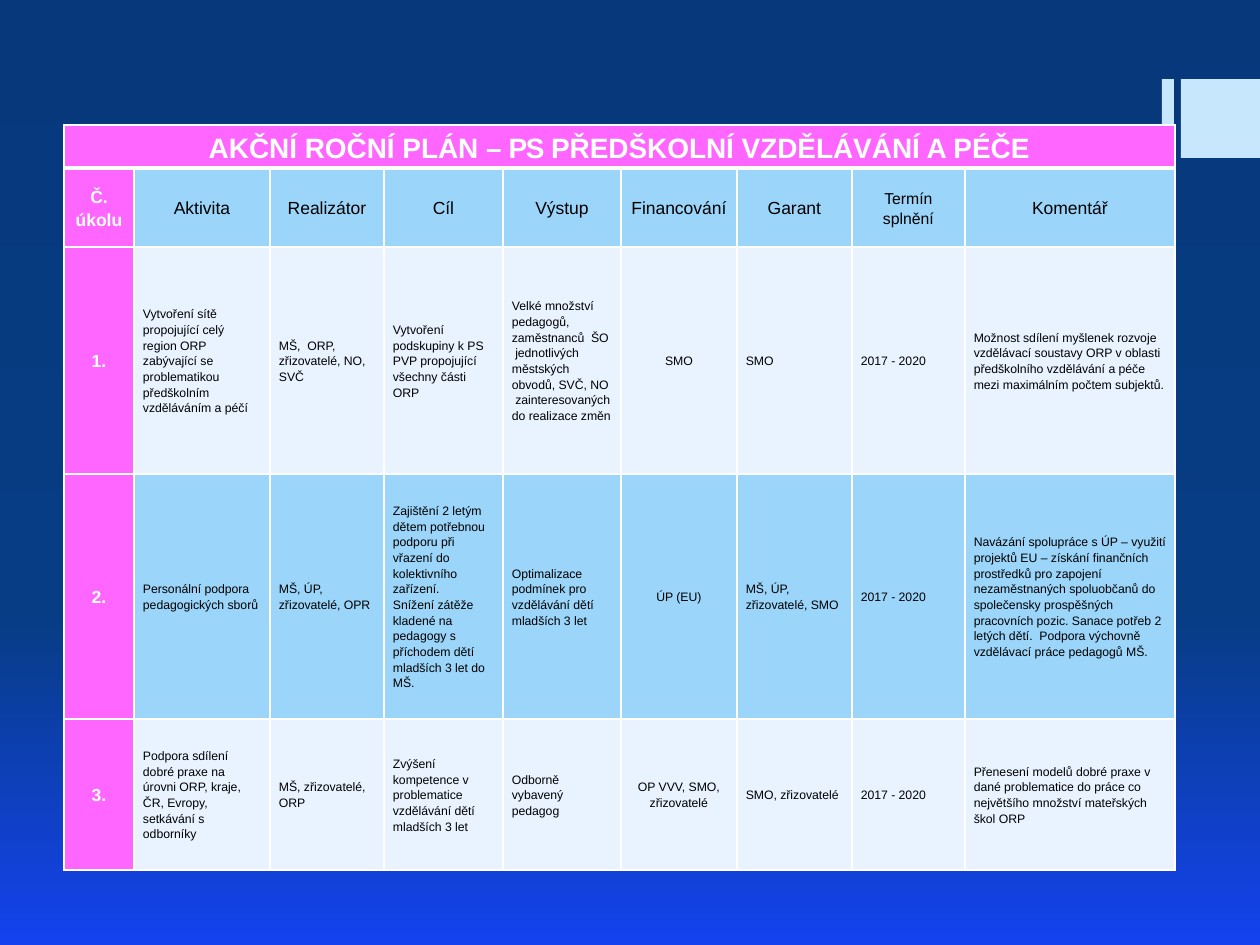
from copy import deepcopy

from pptx import Presentation
from pptx.dml.color import RGBColor
from pptx.enum.shapes import MSO_SHAPE
from pptx.enum.text import MSO_ANCHOR, PP_ALIGN
from pptx.oxml import parse_xml
from pptx.oxml.ns import nsdecls, qn
from pptx.util import Pt

EMU_PER_PX = 914400 / 126
WHITE = RGBColor(0xFF, 0xFF, 0xFF)
BLACK = RGBColor(0, 0, 0)
PINK = RGBColor(0xFF, 0x66, 0xFF)
SKY = RGBColor(0x9B, 0xD5, 0xFA)
PALE = RGBColor(0xE8, 0xF3, 0xFF)
ACCENT = RGBColor(0xC6, 0xE7, 0xFC)
NAVY = RGBColor(0x06, 0x38, 0x7B)
DEEP_BLUE = RGBColor(0x07, 0x3D, 0x84)
BLUE = RGBColor(0x14, 0x42, 0xEE)

COL_WIDTHS = [70, 136, 114, 119, 118, 116, 115, 113, 210]
ROW_HEIGHTS = [43, 79, 227, 245, 151]
FUNDING_COL = 5
DEADLINE_COL = 7

TITLE = [("AKČNÍ ROČNÍ PLÁN –", 0), (" PS ", -70),
         ("PŘEDŠKOLNÍ VZDĚLÁVÁNÍ A PÉČE", 0)]
HEADERS = ["Č. úkolu", "Aktivita", "Realizátor", "Cíl", "Výstup",
           "Financování", "Garant", "Termín splnění", "Komentář"]
TASKS = [
    ["1.",
     "Vytvoření sítě propojující celý region ORP zabývající se "
     "problematikou předškolním vzděláváním a péčí",
     "MŠ,  ORP, zřizovatelé, NO, SVČ",
     "Vytvoření podskupiny k PS PVP propojující všechny části ORP",
     "Velké množství pedagogů, zaměstnanců  ŠO  jednotlivých městských "
     "obvodů, SVČ, NO  zainteresovaných do realizace změn",
     "SMO", "SMO", "2017 - 2020",
     "Možnost sdílení myšlenek rozvoje vzdělávací soustavy ORP v oblasti "
     "předškolního vzdělávání a péče mezi maximálním počtem subjektů."],
    ["2.",
     "Personální podpora pedagogických sborů",
     "MŠ, ÚP, zřizovatelé, OPR",
     "Zajištění 2 letým dětem potřebnou podporu při vřazení do "
     "kolektivního zařízení.\n"
     "Snížení zátěže kladené na pedagogy s příchodem dětí mladších "
     "3 let do MŠ.",
     "Optimalizace podmínek pro vzdělávání dětí mladších 3 let",
     "ÚP (EU)", "MŠ, ÚP, zřizovatelé, SMO", "2017 - 2020",
     "Navázání spolupráce s ÚP – využití projektů EU – získání finančních "
     "prostředků pro zapojení nezaměstnaných spoluobčanů do společensky "
     "prospěšných pracovních pozic. Sanace potřeb 2 letých dětí.  Podpora "
     "výchovně vzdělávací práce pedagogů MŠ."],
    ["3.",
     "Podpora sdílení dobré praxe na úrovni ORP, kraje, ČR, Evropy, "
     "setkávání s odborníky",
     "MŠ, zřizovatelé, ORP",
     "Zvýšení kompetence v problematice vzdělávání dětí mladších 3 let",
     "Odborně vybavený pedagog",
     "OP VVV, SMO, zřizovatelé", "SMO, zřizovatelé", "2017 - 2020",
     "Přenesení modelů dobré praxe v dané problematice do práce co "
     "největšího množství mateřských škol ORP"],
]


def px(n):
    return round(n * EMU_PER_PX)


def set_background(s, stops):
    fill = s.background.fill
    fill.gradient()
    fill.gradient_angle = 270
    gs_list = next(s.element.iter(qn("a:gsLst")))
    gs_list.insert(1, deepcopy(gs_list[0]))
    for stop, (position, color) in zip(fill.gradient_stops, stops):
        stop.position = position
        stop.color.rgb = color


def add_block(s, x, y, w, h):
    sp = s.shapes.add_shape(MSO_SHAPE.RECTANGLE, px(x), px(y), px(w), px(h))
    sp.shadow.inherit = False
    sp.fill.solid()
    sp.fill.fore_color.rgb = ACCENT
    sp.line.fill.background()


def set_borders(cell, top=1, bottom=1):
    tc_pr = cell._tc.get_or_add_tcPr()
    for side, width in (("L", 1), ("R", 1), ("T", top), ("B", bottom)):
        tc_pr.append(parse_xml(
            f'<a:ln{side} {nsdecls("a")} w="{Pt(width)}"><a:solidFill>'
            f'<a:srgbClr val="{WHITE}"/></a:solidFill></a:ln{side}>'))


def style_cell(cell, fill, top=1, bottom=1):
    set_borders(cell, top, bottom)
    cell.fill.solid()
    cell.fill.fore_color.rgb = fill
    cell.vertical_anchor = MSO_ANCHOR.MIDDLE
    cell.margin_left = cell.margin_right = px(9)
    cell.margin_top = cell.margin_bottom = 0


def write(cell, text, size=7, color=BLACK, bold=False, align=PP_ALIGN.LEFT):
    paragraphs = [[(line, 0)] for line in text.split("\n")] \
        if isinstance(text, str) else [text]
    tf = cell.text_frame
    for i, runs in enumerate(paragraphs):
        p = tf.add_paragraph() if i else tf.paragraphs[0]
        p.alignment = align
        p.line_spacing = 1.15
        for content, spacing in runs:
            r = p.add_run()
            r.text = content
            r.font.name = "Arial"
            r.font.size = Pt(size)
            r.font.bold = bold
            r.font.color.rgb = color
            if spacing:
                r.font._element.set("spc", str(spacing))


def fill_title(table):
    last = len(COL_WIDTHS) - 1
    for col in range(last + 1):
        style_cell(table.cell(0, col), PINK, bottom=3)
    table.cell(0, 0).merge(table.cell(0, last))
    write(table.cell(0, 0), TITLE, size=16, color=WHITE, bold=True,
          align=PP_ALIGN.CENTER)


def fill_headers(table):
    for col, text in enumerate(HEADERS):
        cell = table.cell(1, col)
        first = col == 0
        style_cell(cell, PINK if first else SKY, top=3)
        write(cell, text, size=9 if col == DEADLINE_COL else 10,
              color=WHITE if first else BLACK, bold=first,
              align=PP_ALIGN.CENTER)


def fill_tasks(table):
    for row, task in enumerate(TASKS, start=2):
        band = SKY if row % 2 else PALE
        for col, text in enumerate(task):
            cell = table.cell(row, col)
            first = col == 0
            style_cell(cell, PINK if first else band)
            if first:
                write(cell, text, size=10, color=WHITE, bold=True,
                      align=PP_ALIGN.CENTER)
            else:
                write(cell, text, align=PP_ALIGN.CENTER
                      if col == FUNDING_COL else PP_ALIGN.LEFT)


def add_plan_table(s, x, y):
    table = s.shapes.add_table(
        len(ROW_HEIGHTS), len(COL_WIDTHS), px(x), px(y),
        px(sum(COL_WIDTHS)), px(sum(ROW_HEIGHTS))).table
    table.first_row = table.horz_banding = False
    for column, width in zip(table.columns, COL_WIDTHS):
        column.width = px(width)
    for row, height in zip(table.rows, ROW_HEIGHTS):
        row.height = px(height)
    fill_title(table)
    fill_headers(table)
    fill_tasks(table)


def main():
    prs = Presentation()
    prs.slide_width, prs.slide_height = px(1260), px(945)
    s = prs.slides.add_slide(prs.slide_layouts[6])
    set_background(s, [(0, NAVY), (0.65, DEEP_BLUE), (1, BLUE)])
    add_block(s, 1162, 79, 12, 79)
    add_block(s, 1181, 79, 79, 79)
    add_plan_table(s, 64, 125)
    prs.save("out.pptx")


if __name__ == "__main__":
    main()
